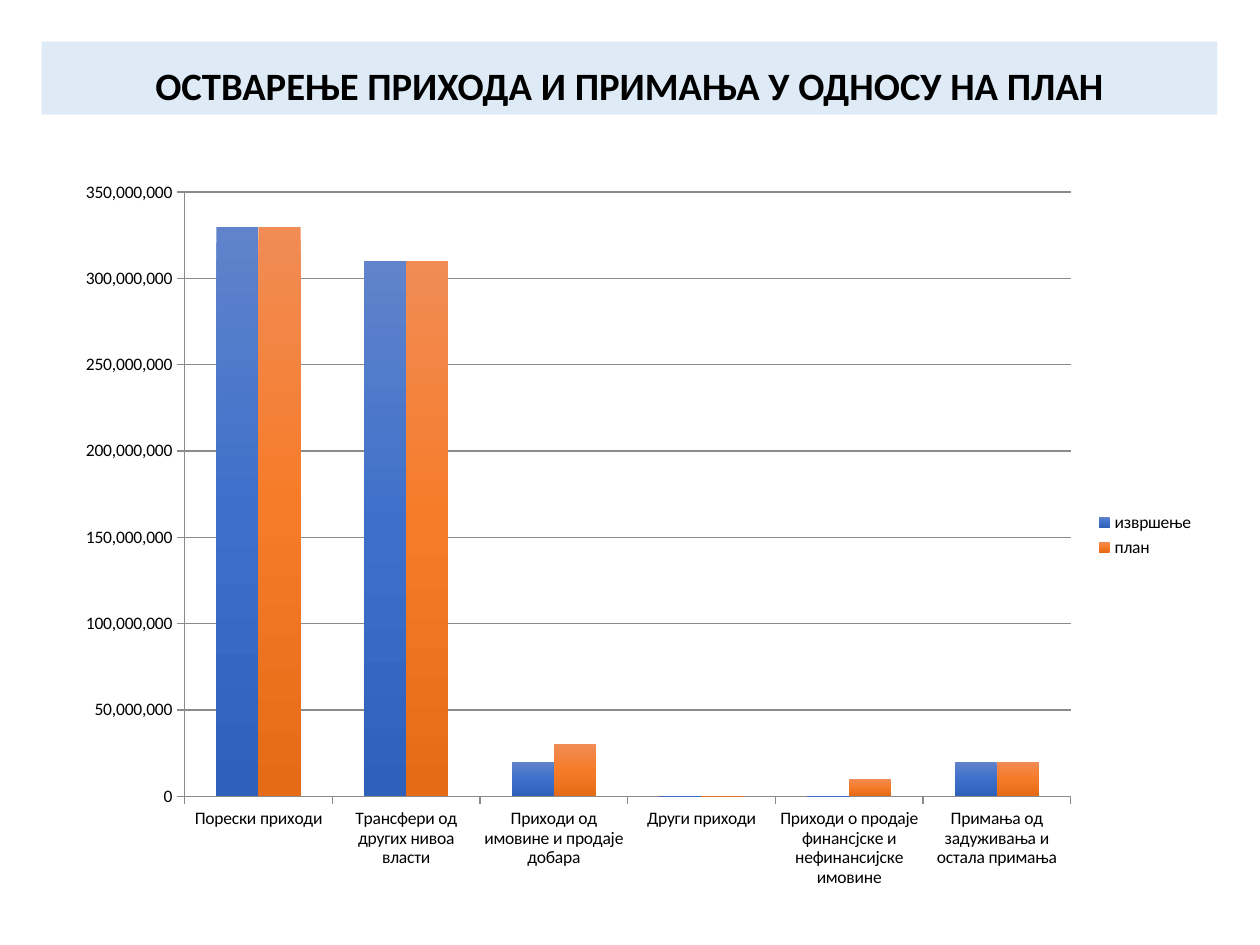
from copy import deepcopy

from pptx import Presentation
from pptx.chart.data import CategoryChartData
from pptx.dml.color import RGBColor
from pptx.enum.chart import XL_CHART_TYPE, XL_LEGEND_POSITION, XL_TICK_MARK
from pptx.enum.shapes import MSO_SHAPE
from pptx.enum.text import MSO_ANCHOR, PP_ALIGN
from pptx.oxml.ns import qn
from pptx.util import Inches, Pt

COLUMN = XL_CHART_TYPE.COLUMN_CLUSTERED
RIGHT = XL_LEGEND_POSITION.RIGHT
OUTSIDE = XL_TICK_MARK.OUTSIDE
NONE = XL_TICK_MARK.NONE
RECT = MSO_SHAPE.RECTANGLE
BOTTOM = MSO_ANCHOR.BOTTOM
CENTER = PP_ALIGN.CENTER

BLACK = RGBColor(0x00, 0x00, 0x00)
PALE = RGBColor(0xDE, 0xEB, 0xF7)
GRAY = RGBColor(0x8B, 0x8B, 0x8B)
# Top, middle and bottom shade of each series
BLUES = (RGBColor(0x60, 0x83, 0xCB), RGBColor(0x3E, 0x70, 0xCA), RGBColor(0x2E, 0x61, 0xBA))
ORANGES = (RGBColor(0xF1, 0x8C, 0x55), RGBColor(0xF6, 0x7B, 0x28), RGBColor(0xE5, 0x6B, 0x17))
FONT = "Calibri"

prs = Presentation()
prs.slide_width, prs.slide_height = Inches(10), Inches(7.5)
slide = prs.slides.add_slide(prs.slide_layouts[6])

# Title band
band = slide.shapes.add_shape(RECT, Inches(0.33), Inches(0.33), Inches(9.33), Inches(0.58))
band.shadow.inherit = False
band.fill.solid()
band.fill.fore_color.rgb = PALE
band.line.fill.background()
frame = band.text_frame
frame.word_wrap = True
frame.vertical_anchor = BOTTOM
para = frame.paragraphs[0]
para.alignment = CENTER
para.line_spacing = 0.8
run = para.add_run()
run.text = "ОСТВАРЕЊЕ ПРИХОДА И ПРИМАЊА У ОДНОСУ НА ПЛАН"
run.font.name = FONT
run.font.size = Pt(22.1)
run.font.bold = True
run.font.color.rgb = BLACK

# Chart data
data = CategoryChartData(number_format="#,##0")
data.categories = [
    "Порески приходи",
    "Трансфери од других нивоа власти",
    "Приходи од имовине и продаје добара",
    "Други приходи",
    "Приходи о продаје финансјске и нефинансијске имовине",
    "Примања од задуживања и остала примања",
]
MILLION = 1_000_000
data.add_series("извршење", [v * MILLION for v in (330, 310, 20, 0, 0, 20)])
data.add_series("план", [v * MILLION for v in (330, 310, 30, 0, 10, 20)])

# Chart
chart = slide.shapes.add_chart(
    COLUMN, Inches(0.5), Inches(1.33), Inches(9.08), Inches(5.83), data
).chart
chart.has_title = False
chart.font.name = FONT
chart.font.size = Pt(10)
chart.font.color.rgb = BLACK
chart.has_legend = True
chart.legend.position = RIGHT
chart.legend.include_in_layout = False

# Axes
scale = chart.value_axis
scale.minimum_scale = 0
scale.maximum_scale = 350 * MILLION
scale.major_unit = 50 * MILLION
scale.tick_labels.number_format = "#,##0"
scale.tick_labels.number_format_is_linked = False
scale.has_major_gridlines = True
for axis in (scale, chart.category_axis):
    axis.major_tick_mark = OUTSIDE
    axis.minor_tick_mark = NONE
for part in (scale, scale.major_gridlines, chart.category_axis):
    part.format.line.color.rgb = GRAY
    part.format.line.width = Pt(0.75)

# Columns shaded from top to bottom
plot = chart.plots[0]
plot.vary_by_categories = False
plot.gap_width = 150
plot.overlap = 0
for series, shades in zip(plot.series, (BLUES, ORANGES)):
    series.invert_if_negative = False
    fill = series.format.fill
    fill.gradient()
    fill.gradient_angle = 270
    stops = next(series._element.iter(qn("a:gsLst")))
    stops.insert(1, deepcopy(stops[0]))
    for stop, place, shade in zip(fill.gradient_stops, (0, 0.5, 1), shades):
        stop.position = place
        stop.color.rgb = shade

prs.save("out.pptx")
